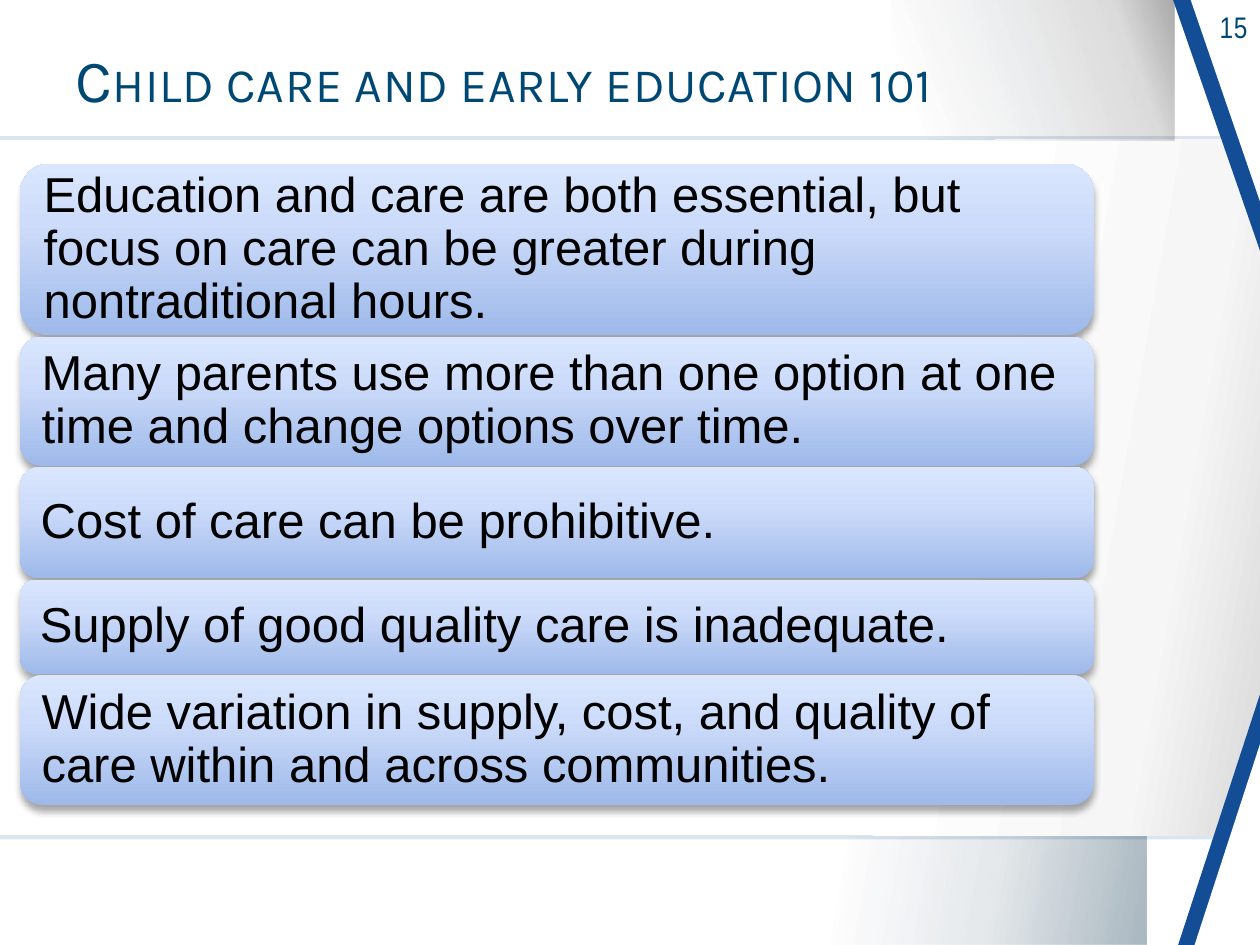
import pptx
import pptx.util
import pptx.dml.color
import pptx.enum.shapes
import pptx.enum.text
import pptx.oxml
import pptx.oxml.ns

Pt = pptx.util.Pt
RGB = pptx.dml.color.RGBColor
KIND = pptx.enum.shapes.MSO_SHAPE
ANCHOR = pptx.enum.text.MSO_ANCHOR
ALIGN = pptx.enum.text.PP_ALIGN
qn = pptx.oxml.ns.qn
NS = pptx.oxml.ns.nsdecls("a")

BLACK = RGB(0, 0, 0)
WHITE = RGB(255, 255, 255)
PALE = RGB(0xF6, 0xF6, 0xF6)
GREY = RGB(0xD9, 0xD9, 0xD9)
RULE = RGB(0x27, 0x5A, 0x99)
NAVY = RGB(0x00, 0x2C, 0x47)
BLUE = RGB(0x12, 0x4D, 0x95)
TEAL = RGB(0x00, 0x48, 0x74)
LOW = RGB(0x9E, 0xB9, 0xEA)
MID = RGB(0xCD, 0xDC, 0xFA)
HIGH = RGB(0xD9, 0xE6, 0xFE)

CARDS = [
    ("Education and care are both essential, but focus on care can be greater "
     "during nontraditional hours.", 98),
    ("Many parents use more than one option at one time and change options "
     "over time.", 74),
    ("Cost of care can be prohibitive.", 63.5),
    ("Supply of good quality care is inadequate.", 54),
    ("Wide variation in supply, cost, and quality of care within and across "
     "communities.", 74),
]


def tint(color, alpha):
    return (f'<a:srgbClr val="{color}"><a:alpha val="{alpha * 1000}"/>'
            '</a:srgbClr>')


def shape(slide, kind, box, fill=WHITE):
    item = slide.shapes.add_shape(kind, *map(Pt, box))
    item.shadow.inherit = False
    item.line.fill.background()
    item.fill.solid()
    item.fill.fore_color.rgb = fill
    return item


def fade(item, stops, angle):
    marks = "".join(f'<a:gs pos="{pos * 1000}">{tint(color, alpha)}</a:gs>'
                    for pos, color, alpha in stops)
    grad = pptx.oxml.parse_xml(
        f'<a:gradFill {NS} rotWithShape="1"><a:gsLst>{marks}</a:gsLst>'
        f'<a:lin ang="{angle * 60000}" scaled="0"/></a:gradFill>')
    props = item.element.spPr
    props.replace(props.find(qn("a:solidFill")), grad)


def write(item, text, size, font, color, inset=(7.2, 3.6)):
    frame = item.text_frame
    frame.word_wrap = True
    frame.margin_left = frame.margin_right = Pt(inset[0])
    frame.margin_top = frame.margin_bottom = Pt(inset[1])
    para = frame.paragraphs[0]
    para.alignment = ALIGN.LEFT
    run = para.add_run()
    run.text = text
    run.font.size = Pt(size)
    run.font.name = font
    run.font.color.rgb = color
    return frame, para, run


def panel(slide, box):
    left, top, width, height = box
    rim = shape(slide, KIND.RECTANGLE, box, RULE)
    clear = rim.element.spPr.find(qn("a:solidFill"))
    clear.getparent().replace(clear, pptx.oxml.parse_xml(
        f'<a:solidFill {NS}>{tint(RULE, 16)}</a:solidFill>'))
    body = shape(slide, KIND.RECTANGLE, (left, top + 2.2, width, height - 4.4))
    fade(body, [(0, WHITE, 100), (72, WHITE, 100), (90, PALE, 100),
                (100, GREY, 100)], 10)


def glow(slide, box, stops, angle):
    fade(shape(slide, KIND.RECTANGLE, box), stops, angle)


def wedge(slide, box, inner, down):
    left, top, width, height = box
    wide, tall = inner
    edge = top if down else top + height - tall
    for part, color in ((box, BLUE),
                        ((left + width - wide, edge, wide, tall), WHITE)):
        item = shape(slide, KIND.ISOSCELES_TRIANGLE, part, color)
        item.adjustments[0] = 1
        if down:
            item.element.spPr.find(qn("a:xfrm")).set("flipV", "1")


def number(slide, box):
    item = slide.shapes.add_textbox(*map(Pt, box))
    frame, para, run = write(item, "15", 17, "Arial Narrow", TEAL)
    para.alignment = ALIGN.RIGHT
    run.font._element.set("spc", "40")


def title(slide, box):
    item = slide.shapes.add_textbox(*map(Pt, box))
    frame, para, run = write(item, "Child care and early education 101",
                             34.2, "Karla", TEAL)
    frame.vertical_anchor = ANCHOR.MIDDLE
    para.line_spacing = 0.85
    run.font._element.set("spc", "40")
    run.font._element.set("cap", "small")


def card(slide, box, text):
    item = shape(slide, KIND.ROUNDED_RECTANGLE, box)
    fade(item, [(0, LOW, 100), (65, MID, 100), (100, HIGH, 100)], 270)
    item.element.spPr.find(qn("a:effectLst")).append(pptx.oxml.parse_xml(
        f'<a:outerShdw {NS} blurRad="{Pt(4)}" dist="{Pt(3)}" dir="5400000" '
        f'rotWithShape="0">{tint(BLACK, 35)}</a:outerShdw>'))
    frame, para, run = write(item, text, 28, "Arial", BLACK, (8.64, 8.64))
    frame.vertical_anchor = ANCHOR.MIDDLE
    para.line_spacing = 0.9


def stack(slide, box, gap):
    left, top, width = box
    for text, height in CARDS:
        card(slide, (left, top, width, height), text)
        top += height + gap


def main():
    deck = pptx.Presentation()
    deck.slide_width, deck.slide_height = Pt(720), Pt(540)
    slide = deck.slides.add_slide(deck.slide_layouts[6])
    panel(slide, (0, 77.8, 720, 401.8))
    glow(slide, (463, 478, 192.2, 62),
         [(10, NAVY, 0), (56, NAVY, 11), (100, NAVY, 34)], 10)
    glow(slide, (509.8, 0, 161.3, 80.6),
         [(10, NAVY, 0), (81, BLACK, 14), (100, BLACK, 34)], 340)
    wedge(slide, (670.3, 0, 49.7, 143.3), (39.6, 115.2), True)
    number(slide, (662.4, 1.4, 57.6, 28))
    wedge(slide, (673.2, 396.7, 46.8, 143.3), (37.4, 114.8), False)
    title(slide, (36, 17.3, 565.2, 61.2))
    stack(slide, (11.5, 93.6, 613.4), 0.7)
    deck.save("out.pptx")


if __name__ == "__main__":
    main()
